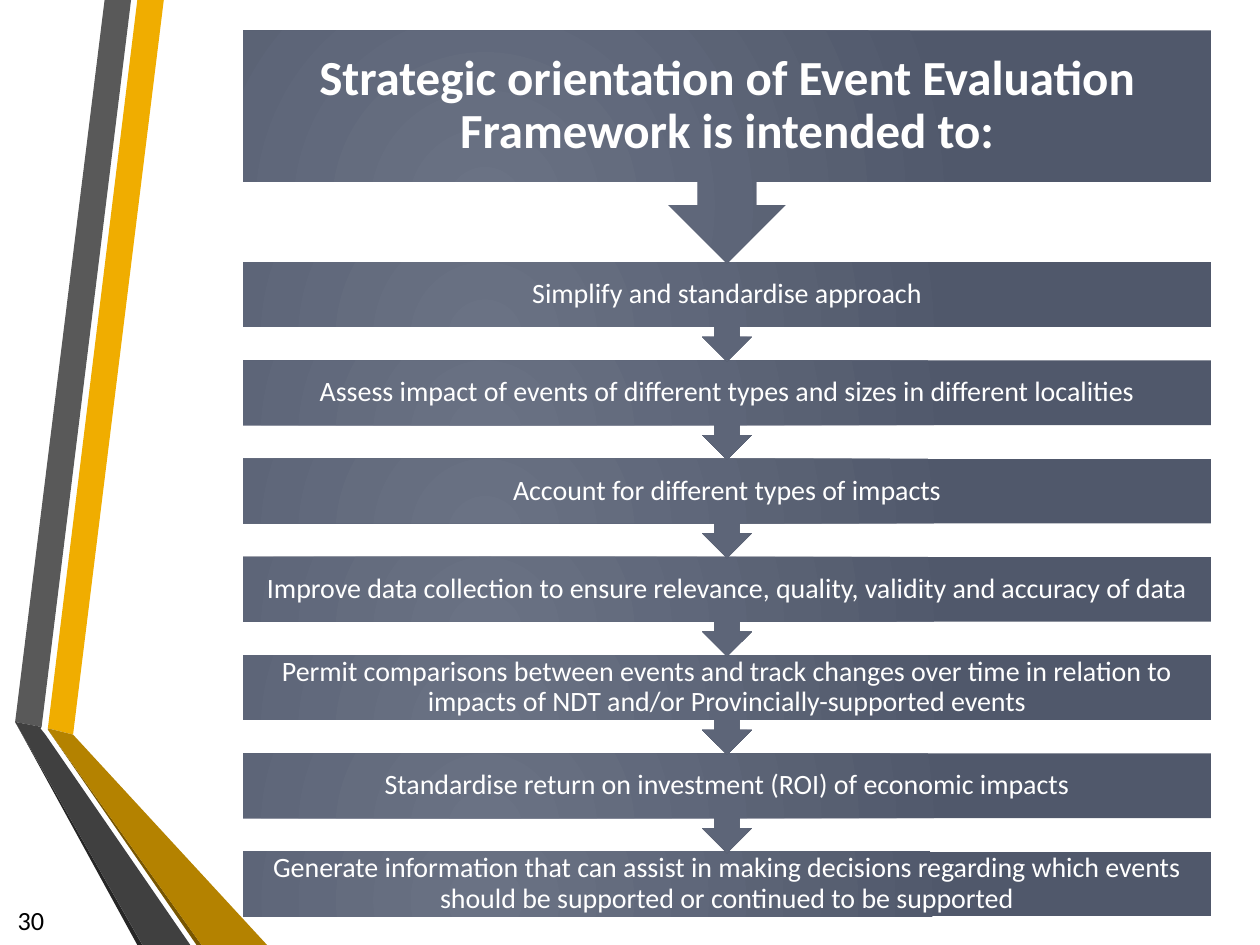
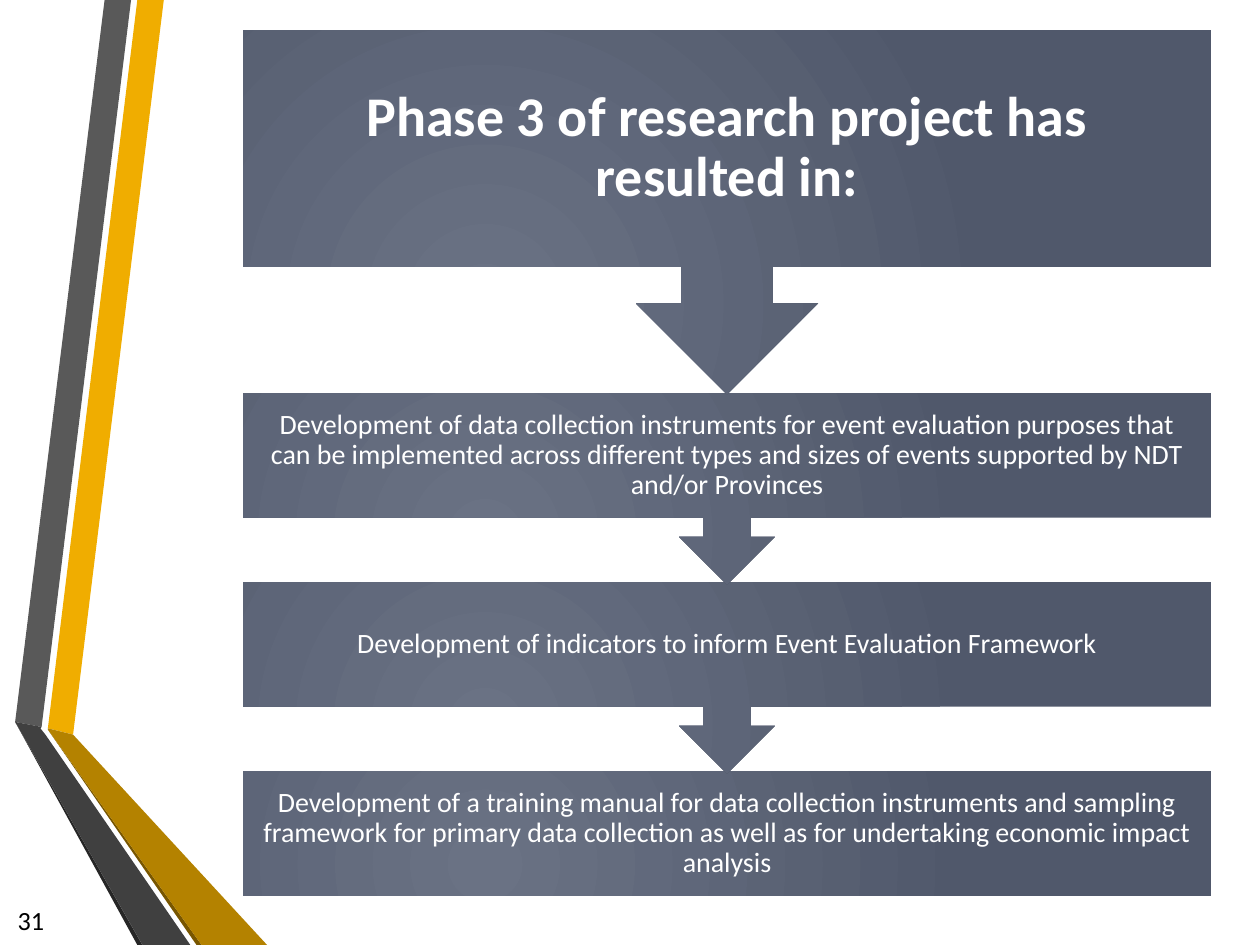
from lxml import etree
from pptx import Presentation
from pptx.dml.color import RGBColor
from pptx.enum.shapes import MSO_SHAPE
from pptx.enum.text import MSO_ANCHOR, MSO_AUTO_SIZE, PP_ALIGN
from pptx.oxml.ns import qn
from pptx.util import Inches, Pt

CENTER, RIGHT = PP_ALIGN.CENTER, PP_ALIGN.RIGHT
MIDDLE = MSO_ANCHOR.MIDDLE
NO_AUTOFIT = MSO_AUTO_SIZE.NONE
RECTANGLE, CALLOUT = MSO_SHAPE.RECTANGLE, MSO_SHAPE.UP_ARROW_CALLOUT

FONT = "Calibri"
WHITE, BLACK = "FFFFFF", "000000"
SLATE_LIGHT, SLATE_DARK = "6A7284", "50586B"
TITLE_ONLY = 5
FLOW_LEFT, FLOW_TOP, FLOW_WIDTH = 1.93, 0.24, 7.68
BOX_SHARE = 0.65  # part of a callout's height taken by its box

RIBBONS = [
    ("F0AD00", [(0.38, 5.78), (0.58, 5.83), (1.3, 0), (1.09, 0)]),
    ("595959", [(1.04, 0), (0.83, 0), (0.12, 5.73), (0.33, 5.77)]),
    ("262626", [(0.12, 5.73), (1.09, 7.5), (1.13, 7.5)]),
    ("785600", [(0.38, 5.79), (1.56, 7.5), (1.6, 7.5)]),
    ("B48200", [(0.38, 5.79), (1.6, 7.5), (2.12, 7.5), (0.58, 5.83), (0.38, 5.78)]),
    ("404040", [(1.51, 7.5), (0.36, 5.83), (0.32, 5.78), (0.33, 5.77),
                (0.12, 5.73), (1.13, 7.5)]),
]

SLIDES = [
    dict(
        number="30",
        title="Strategic orientation of Event Evaluation Framework is intended to:",
        title_size=28, title_inset=0.22, title_height=1.85,
        first_step=2.08, pitch=0.78, step_height=0.79,
        steps=[
            "Simplify and standardise approach",
            "Assess impact of events of different types and sizes in different localities",
            "Account for different types of impacts",
            "Improve data collection to ensure relevance, quality, validity and accuracy of data",
            "Permit comparisons between events and track changes over time in relation to "
            "impacts of NDT and/or Provincially-supported events",
            "Standardise return on investment (ROI) of economic impacts",
            "Generate information that can assist in making decisions regarding which events "
            "should be supported or continued to be supported",
        ],
    ),
    dict(
        number="31",
        title="Phase 3 of research project has resulted in:",
        title_size=32, title_inset=0.25, title_height=2.89,
        first_step=3.12, pitch=1.5, step_height=1.52,
        steps=[
            "Development of data collection instruments for event evaluation purposes that can "
            "be implemented across different types and sizes of events supported by NDT "
            "and/or Provinces",
            "Development of indicators to inform Event Evaluation Framework",
            "Development of a training manual for data collection instruments and sampling "
            "framework for primary data collection as well as for undertaking economic impact "
            "analysis",
        ],
    ),
]


def color(hex_string):
    return RGBColor.from_string(hex_string)


def place(shape, left, top, width, height):
    shape.left, shape.top = Inches(left), Inches(top)
    shape.width, shape.height = Inches(width), Inches(height)


def write(shape, text, size, text_color=WHITE, bold=False, align=CENTER,
          insets=(0.12, 0.12), line_spacing=0.9):
    """Fill a shape with one formatted paragraph; insets are (sides, top and bottom)."""
    frame = shape.text_frame
    frame.word_wrap = True
    frame.auto_size = NO_AUTOFIT
    frame.vertical_anchor = MIDDLE
    frame.margin_left = frame.margin_right = Inches(insets[0])
    frame.margin_top = frame.margin_bottom = Inches(insets[1])
    paragraph = frame.paragraphs[0]
    paragraph.alignment = align
    paragraph.line_spacing = line_spacing
    run = paragraph.add_run()
    run.text = text
    run.font.name, run.font.size, run.font.bold = FONT, Pt(size), bold
    run.font.color.rgb = color(text_color)


def fill_slate(shape):
    """Circular gradient centred in the lower left of the shape."""
    shape.fill.gradient()
    for stop, stop_color in zip(shape.fill.gradient_stops, (SLATE_LIGHT, SLATE_DARK)):
        stop.color.rgb = color(stop_color)
    gradient = shape._element.spPr.find(qn("a:gradFill"))
    gradient.remove(gradient.find(qn("a:lin")))
    circle = etree.SubElement(gradient, qn("a:path"), path="circle")
    etree.SubElement(circle, qn("a:fillToRect"), l="50000", t="100000", r="100000", b="50000")


def add_ribbons(slide):
    for ribbon_color, points in RIBBONS:
        corners = [(Inches(x), Inches(y)) for x, y in points]
        builder = slide.shapes.build_freeform(*corners[0])
        builder.add_line_segments(corners[1:], close=True)
        ribbon = builder.convert_to_shape()
        ribbon.shadow.inherit = False
        ribbon.fill.solid()
        ribbon.fill.fore_color.rgb = color(ribbon_color)
        ribbon.line.fill.background()


def add_flow_box(slide, top, height, preset=CALLOUT):
    box = slide.shapes.add_shape(preset, 0, 0, 0, 0)
    place(box, FLOW_LEFT, top, FLOW_WIDTH, height)
    if preset == CALLOUT:
        box.rotation = 180
    box.shadow.inherit = False
    box.line.fill.background()
    fill_slate(box)


def add_step(slide, text, top, height, is_last):
    box_height = height * BOX_SHARE
    if is_last:
        add_flow_box(slide, top, box_height, RECTANGLE)
    else:
        add_flow_box(slide, top, height)
    label = slide.shapes.add_textbox(0, 0, 0, 0)
    place(label, FLOW_LEFT, top, FLOW_WIDTH, box_height)
    write(label, text, 16)


def add_title(slide, text, size, inset, height):
    add_flow_box(slide, FLOW_TOP, height)
    title = slide.shapes.title
    place(title, FLOW_LEFT, FLOW_TOP, FLOW_WIDTH, height * BOX_SHARE)
    write(title, text, size, bold=True, insets=(inset, inset))
    slide.shapes._spTree.append(title._element)  # bring in front of its box


def add_page_number(slide, number):
    label = slide.shapes.add_textbox(0, 0, 0, 0)
    place(label, 0, 7.1, 0.45, 0.4)
    write(label, number, 15, text_color=BLACK, align=RIGHT,
          insets=(0.1, 0.05), line_spacing=1.0)


def add_flow_slide(presentation, content):
    slide = presentation.slides.add_slide(presentation.slide_layouts[TITLE_ONLY])
    add_ribbons(slide)
    last = len(content["steps"]) - 1
    # Built from the bottom up so that each arrow tip lies over the next box
    for index in range(last, -1, -1):
        top = content["first_step"] + index * content["pitch"]
        add_step(slide, content["steps"][index], top, content["step_height"], index == last)
    add_title(slide, content["title"], content["title_size"],
              content["title_inset"], content["title_height"])
    add_page_number(slide, content["number"])


def main():
    presentation = Presentation()
    presentation.slide_width, presentation.slide_height = Inches(10), Inches(7.5)
    for content in SLIDES:
        add_flow_slide(presentation, content)
    presentation.save("out.pptx")


if __name__ == "__main__":
    main()
